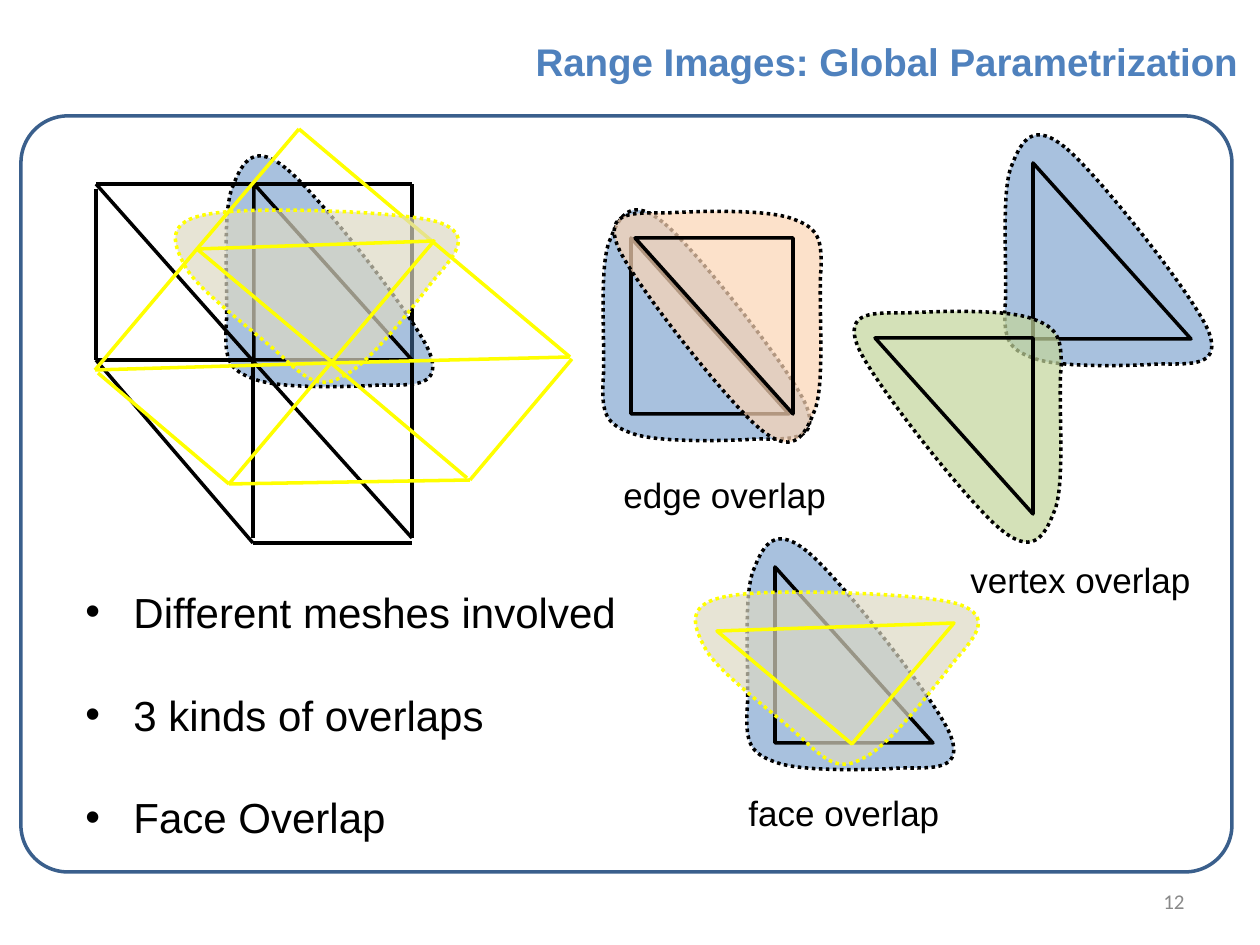
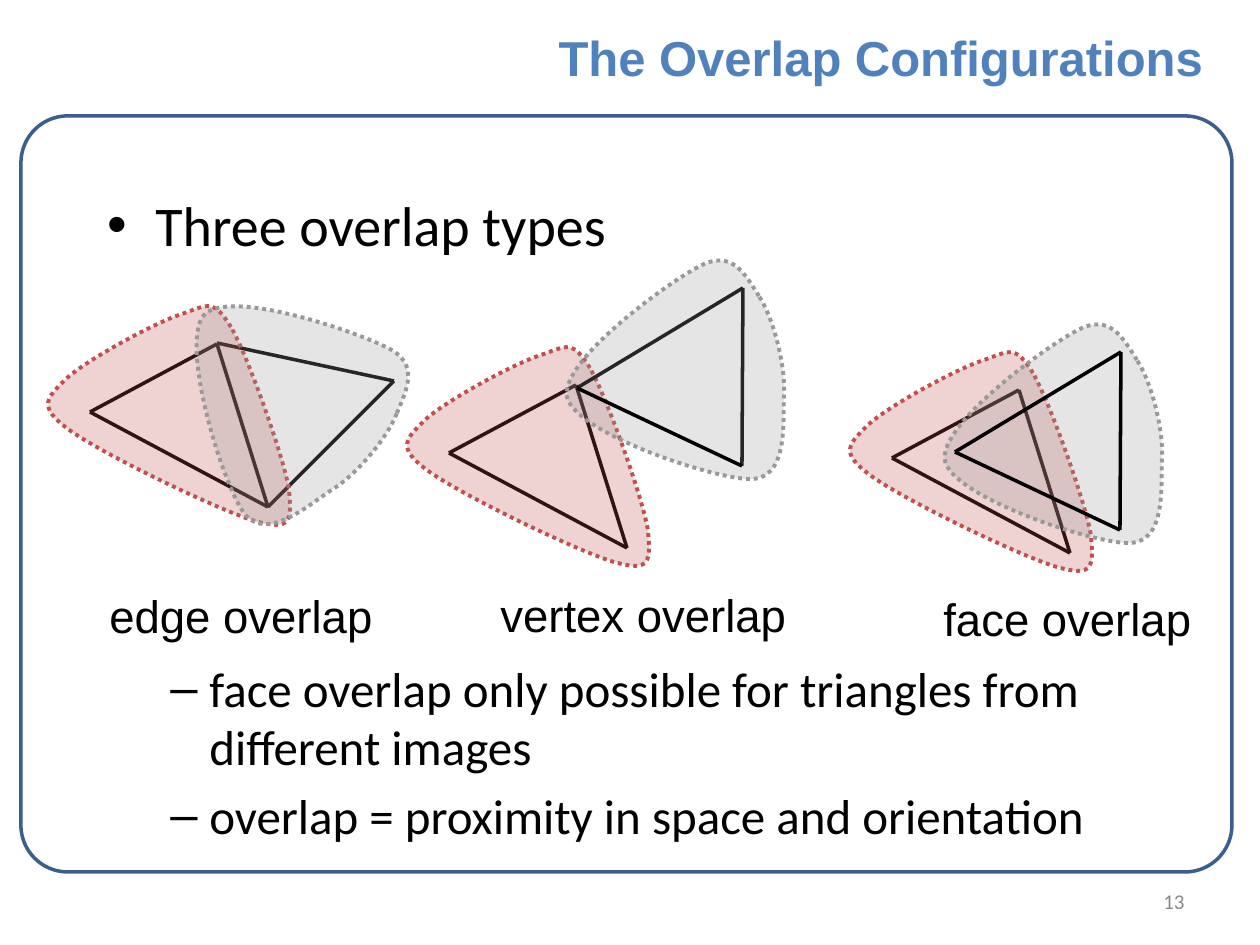
from itertools import pairwise
from math import cos, radians, sin

from lxml import etree
from pptx import Presentation
from pptx.dml.color import RGBColor
from pptx.enum.dml import MSO_LINE_DASH_STYLE as DASH
from pptx.enum.shapes import MSO_CONNECTOR, MSO_SHAPE
from pptx.enum.text import MSO_ANCHOR, MSO_AUTO_SIZE, PP_ALIGN
from pptx.oxml.ns import qn
from pptx.util import Emu, Pt

PX = 914400 / 126
COLORS = {
    "title": "4F81BD", "frame": "3A5F8C", "number": "898989", "black": "000000",
    "blue": "4F81BD", "peach": "FCD5B5", "green": "C3D69B", "sand": "DDD9C3",
    "yellow": "FFFF00", "red": "C0504D", "grey": "999999",
}

# Outlines around their own centre: a start point, then three points per curve
MESH_HALO = [
    (-41, -102), (-8, -74), (85, 44), (100, 79), (115, 116), (83, 113), (51, 113),
    (21, 115), (-50, 117), (-75, 107), (-100, 98), (-104, 88), (-103, 57),
    (-100, 24), (-108, -60), (-96, -86), (-86, -112), (-74, -130), (-41, -102),
]
RED_HALO = [
    (62, -89), (44, -118), (39, -111), (13, -102), (-15, -93), (-84, -55),
    (-103, -37), (-122, -18), (-132, -10), (-101, 13), (-69, 37), (49, 94),
    (86, 105), (122, 115), (123, 106), (120, 73), (115, 42), (79, -60), (62, -89),
]
GREY_HALO = [
    (94, -2), (104, -26), (117, -51), (85, -67), (52, -84), (-74, -127),
    (-99, -100), (-123, -72), (-83, 61), (-61, 95), (-40, 129), (2, 93),
    (27, 76), (54, 60), (85, 22), (94, -2),
]
MESH_TRIANGLE = [(-75, 88), (-75, -88), (83, 88)]
RED_TRIANGLE = [(99, 91), (48, -72), (-79, -4), (99, 91)]
GREY_TRIANGLE = [(36, 92), (37, -86), (-129, 14)]
GREY_TURN = -54.7
MESH_TURN = -49.9


def px(n):
    return Emu(round(n * PX))


def rgb(name):
    return RGBColor.from_string(COLORS[name])


def place(points, center, angle=0):
    """Turn points clockwise by angle and move them to center."""
    c, s = cos(radians(angle)), sin(radians(angle))
    return [(center[0] + x * c - y * s, center[1] + x * s + y * c) for x, y in points]


# Text
def write(p, text, size, font="Arial", color="black", bold=False, align=None):
    p.alignment = align
    r = p.add_run()
    r.text = text
    f = r.font
    f.size, f.name, f.bold, f.color.rgb = Pt(size), font, bold, rgb(color)


def text_box(slide, box, wrap=False):
    tf = slide.shapes.add_textbox(*map(px, box)).text_frame
    tf.word_wrap = wrap
    return tf


def label(slide, text, box, size):
    write(text_box(slide, box).paragraphs[0], text, size)


def bullet(p, text, size, margin, hang, char="•", before=0, level=0, font="Arial"):
    p.level = level
    pPr = p._p.get_or_add_pPr()
    pPr.set("marL", str(px(margin)))
    pPr.set("indent", str(px(-hang)))
    etree.SubElement(pPr, qn("a:buFont")).set("typeface", "Arial")
    etree.SubElement(pPr, qn("a:buChar")).set("char", char)
    if before:
        p.space_before = Pt(before)
    write(p, text, size, font)


# Outlines and lines
def outline(slide, points, line, fill=None, alpha=100, width=2, curved=False):
    builder = slide.shapes.build_freeform(*points[0], scale=PX)
    builder.add_line_segments(points[1:], close=True)
    sp = builder.convert_to_shape()
    sp.shadow.inherit = False
    sp.line.color.rgb, sp.line.width = rgb(line), Pt(width)
    if fill:
        sp.fill.solid()
        sp.fill.fore_color.rgb = rgb(fill)
        tint = sp._element.spPr.find(qn("a:solidFill"))[0]
        etree.SubElement(tint, qn("a:alpha")).set("val", str(alpha * 1000))
    else:
        sp.fill.background()
    if curved:
        sp.line.dash_style = DASH.ROUND_DOT
        segments = list(sp._element.iter(qn("a:lnTo")))
        for i in range(0, len(segments), 3):
            curve = etree.Element(qn("a:cubicBezTo"))
            segments[i].addprevious(curve)
            for segment in segments[i:i + 3]:
                curve.append(segment[0])
                segment.getparent().remove(segment)


def polyline(slide, points, color="black"):
    for (x1, y1), (x2, y2) in pairwise(points):
        ln = slide.shapes.add_connector(MSO_CONNECTOR.STRAIGHT, *map(px, (x1, y1, x2, y2)))
        ln.line.color.rgb, ln.line.width = rgb(color), Pt(2)
        etree.SubElement(ln._element.spPr, qn("a:effectLst"))


def mesh_face(slide, center, fill, alpha, line="black", angle=0):
    """A triangle of a mesh with its dotted halo."""
    outline(slide, place(MESH_HALO, center, angle), line, fill, alpha, curved=True)
    outline(slide, place(MESH_TRIANGLE, center, angle), line)


def blue_face(slide, center):
    mesh_face(slide, center, "blue", 49)


def yellow_face(slide, center):
    mesh_face(slide, center, "sand", 69, "yellow", MESH_TURN)


def red_face(slide, center):
    polyline(slide, place(RED_TRIANGLE, center))
    outline(slide, place(RED_HALO, center), "red", "red", 25, 2.25, True)


def grey_halo(slide, center, angle=GREY_TURN):
    outline(slide, place(GREY_HALO, center, angle), "grey", "grey", 25, 2.25, True)


# Shared slide parts
def base_slide(prs, title, title_box, title_size, number):
    slide = prs.slides.add_slide(prs.slide_layouts[5])
    sp = slide.shapes.title
    sp.left, sp.top, sp.width, sp.height = map(px, title_box)
    tf = sp.text_frame
    tf.word_wrap, tf.auto_size = False, MSO_AUTO_SIZE.NONE
    tf.vertical_anchor = MSO_ANCHOR.TOP
    write(tf.paragraphs[0], title, title_size, color="title", bold=True, align=PP_ALIGN.LEFT)

    frame = slide.shapes.add_shape(MSO_SHAPE.ROUNDED_RECTANGLE, *map(px, (21, 116, 1211, 756)))
    frame.adjustments[0] = 0.062
    frame.shadow.inherit = False
    frame.fill.background()
    frame.line.color.rgb, frame.line.width = rgb("frame"), Pt(2)

    tf = text_box(slide, (903, 876, 294, 50), wrap=True)
    tf.vertical_anchor = MSO_ANCHOR.MIDDLE
    write(tf.paragraphs[0], number, 12, "Calibri", "number", align=PP_ALIGN.RIGHT)
    return slide


def parametrization_slide(prs):
    slide = base_slide(prs, "Range Images: Global Parametrization", (523, 32, 737, 59), 22, "12")

    # Edge and vertex overlap
    label(slide, "edge overlap", (611, 467, 229, 55), 20)
    blue_face(slide, (706, 326))
    mesh_face(slide, (718, 326), "peach", 71, angle=180)
    label(slide, "vertex overlap", (958, 552, 247, 55), 20)
    blue_face(slide, (1108, 251))
    mesh_face(slide, (958, 426), "green", 71, angle=180)

    # Black mesh
    polyline(slide, [(412, 360), (412, 184)])
    blue_face(slide, (329, 272))
    for run in (
        [(412, 184), (253, 184), (96, 184), (253, 361), (412, 538), (412, 361)],
        [(412, 543), (253, 543), (96, 360), (253, 360)],
        [(253, 538), (253, 361)],
        [(96, 360), (96, 189)],
    ):
        polyline(slide, run)

    # Yellow mesh
    polyline(slide, [(433, 242), (299, 129)], "yellow")
    yellow_face(slide, (313, 248))
    for run in (
        [(299, 129), (197, 249), (95, 370), (331, 363), (570, 357), (433, 242)],
        [(572, 359), (470, 480), (229, 484), (331, 363), (467, 478)],
        [(229, 484), (98, 373)],
    ):
        polyline(slide, run, "yellow")

    # Face overlap
    label(slide, "face overlap", (736, 785, 218, 55), 20)
    blue_face(slide, (850, 655))
    yellow_face(slide, (833, 630))

    tf = text_box(slide, (10, 580, 713, 267), wrap=True)
    for i, text in enumerate(("Different meshes involved", "3 kinds of overlaps", "Face Overlap")):
        p = tf.add_paragraph() if i else tf.paragraphs[0]
        bullet(p, text, 24, 111, 48, before=30 if i else 0, level=1)


def configurations_slide(prs):
    slide = base_slide(prs, "The Overlap Configurations", (546, 21, 678, 72), 28, "13")

    tf = text_box(slide, (95, 184, 1153, 667), wrap=True)
    bullet(tf.paragraphs[0], "Three overlap types", 32, 48, 48, font="Calibri")
    for text, before in (
        ("face overlap only possible for triangles from different images", 229),
        ("overlap = proximity in space and orientation", 5.6),
    ):
        bullet(tf.add_paragraph(), text, 28, 102, 39, "–", before, 1, "Calibri")

    # Edge overlap
    polyline(slide, [(268, 507), (394, 381), (217, 343)])
    red_face(slide, (169, 416))
    grey_halo(slide, (303, 415), 0)
    label(slide, "edge overlap", (97, 582, 291, 68), 26)

    # Vertex overlap
    red_face(slide, (528, 457))
    center = (706, 374)
    bottom, top, left = place(GREY_TRIANGLE, center)
    polyline(slide, [bottom, top, left])
    grey_halo(slide, center)
    polyline(slide, [left, bottom])
    label(slide, "vertex overlap", (488, 581, 314, 68), 26)

    # Face overlap
    red_face(slide, (971, 462))
    center = (1084, 438)
    grey_halo(slide, center)
    polyline(slide, place(GREY_TRIANGLE + GREY_TRIANGLE[:1], center))
    label(slide, "face overlap", (931, 585, 276, 68), 26)


def main():
    prs = Presentation()
    prs.slide_width, prs.slide_height = px(1260), px(945)
    parametrization_slide(prs)
    configurations_slide(prs)
    prs.save("out.pptx")


if __name__ == "__main__":
    main()
